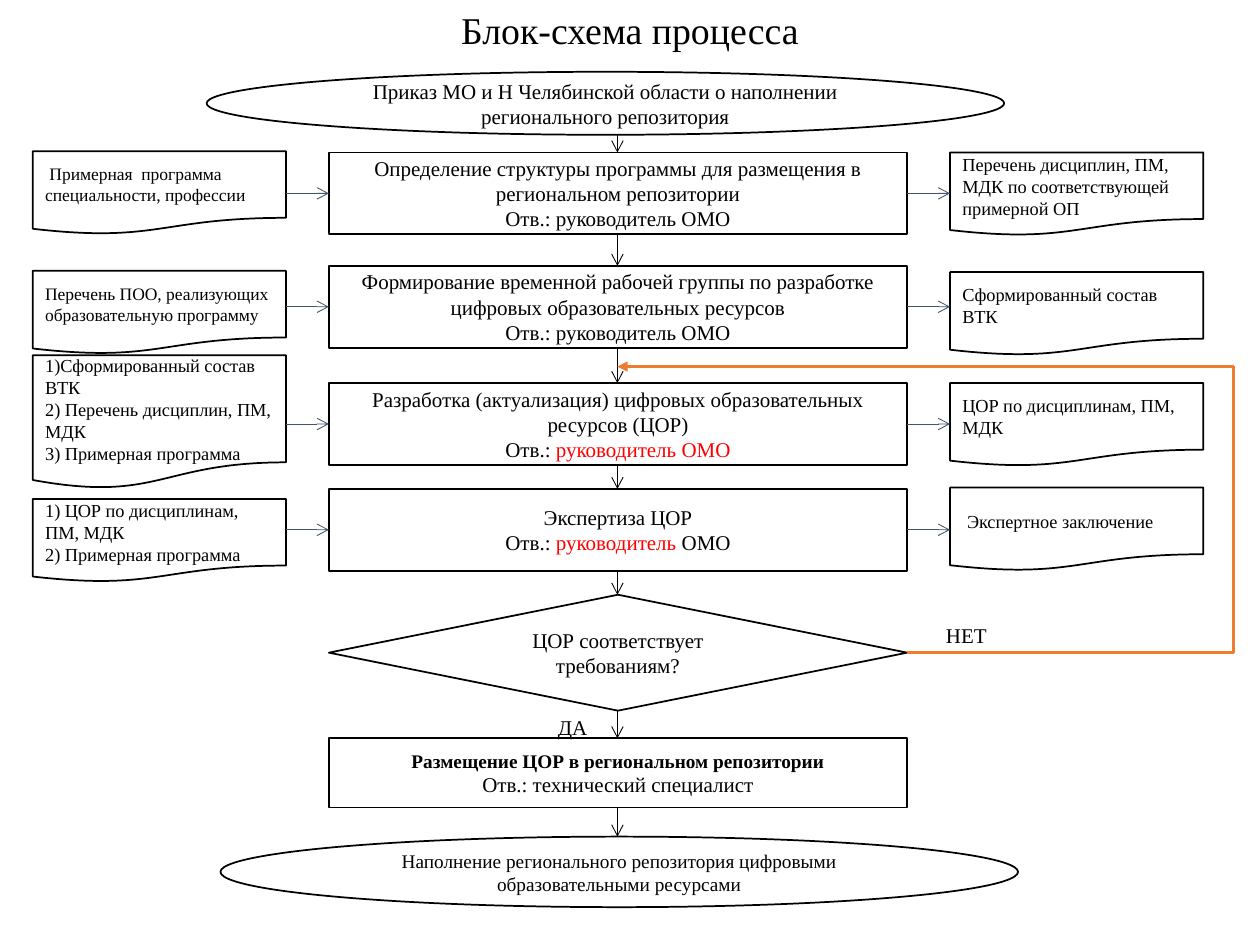
from dataclasses import dataclass
from itertools import pairwise

import lxml.etree
import pptx
import pptx.dml.color
import pptx.enum.shapes
import pptx.enum.text
import pptx.oxml.ns
import pptx.util

KIND = pptx.enum.shapes.MSO_SHAPE
LINK = pptx.enum.shapes.MSO_CONNECTOR
ALIGN = pptx.enum.text.PP_ALIGN
CELL = pptx.util.Inches(0.1)  # the slide is a grid of 100 columns by 75 rows


@dataclass(frozen=True)
class Theme:
    font: str = "Times New Roman"
    ink: str = "000000"
    paper: str = "FFFFFF"
    alert: str = "FF0000"
    flow: str = "44546A"
    loop: str = "ED7D31"
    title: float = 21.6
    body: float = 12
    final: float = 11
    note: float = 10.5
    small: float = 10
    outline: float = 1
    arrow: float = 0.5
    loop_width: float = 1.5


THEME = Theme()


@dataclass(frozen=True)
class Span:
    text: str
    size: float = THEME.body
    color: str = THEME.ink
    bold: bool = False


@dataclass(frozen=True)
class Area:
    left: float
    top: float
    width: float
    height: float

    @property
    def bottom(self) -> float:
        return self.top + self.height

    @property
    def right(self) -> float:
        return self.left + self.width

    @property
    def middle(self) -> float:
        return self.top + self.height / 2

    def lengths(self) -> list[int]:
        return [grid(n) for n in (self.left, self.top, self.width, self.height)]


Lines = list[list[Span]]


@dataclass(frozen=True)
class Note:
    top: float
    lines: Lines
    height: float = 6.6


@dataclass(frozen=True)
class Stage:
    top: float
    lines: Lines
    source: Note
    result: Note


def grid(cells: float) -> int:
    return round(cells * CELL)


def rgb(code: str) -> pptx.dml.color.RGBColor:
    return pptx.dml.color.RGBColor.from_string(code)


def plain(*texts: str, size: float = THEME.body) -> Lines:
    """One single-span paragraph for each text."""
    return [[Span(text, size)] for text in texts]


def write(frame, lines: Lines, align, wrap: bool = True) -> None:
    frame.word_wrap = wrap
    frame.auto_size = pptx.enum.text.MSO_AUTO_SIZE.NONE
    frame.vertical_anchor = pptx.enum.text.MSO_ANCHOR.MIDDLE
    frame.margin_top = frame.margin_bottom = 0
    for index, spans in enumerate(lines):
        para = frame.add_paragraph() if index else frame.paragraphs[0]
        para.alignment = align
        for span in spans:
            run = para.add_run()
            run.text = span.text
            run.font.name = THEME.font
            run.font.size = pptx.util.Pt(span.size)
            run.font.bold = span.bold
            run.font.color.rgb = rgb(span.color)


def draw_box(page, kind, area: Area, lines: Lines, align=ALIGN.CENTER) -> None:
    box = page.shapes.add_shape(kind, *area.lengths())
    box.shadow.inherit = False
    box.fill.solid()
    box.fill.fore_color.rgb = rgb(THEME.paper)
    box.line.color.rgb = rgb(THEME.ink)
    box.line.width = pptx.util.Pt(THEME.outline)
    write(box.text_frame, lines, align)


def draw_label(page, area: Area, text: str) -> None:
    box = page.shapes.add_textbox(*area.lengths())
    write(box.text_frame, plain(text), ALIGN.LEFT, wrap=False)


def draw_arrow(page, start, end, color=THEME.ink, width=THEME.arrow,
               kind=LINK.STRAIGHT, head="arrow"):
    arrow = page.shapes.add_connector(kind, *map(grid, (*start, *end)))
    arrow.line.color.rgb = rgb(color)
    arrow.line.width = pptx.util.Pt(width)
    qn = pptx.oxml.ns.qn
    lxml.etree.SubElement(arrow.line._get_or_add_ln(), qn("a:tailEnd"), type=head)
    lxml.etree.SubElement(arrow._element.spPr, qn("a:effectLst"))
    return arrow


def draw_loop(page, start, end, turn: float) -> None:
    """Elbow arrow whose upright part stands at column `turn`."""
    loop = draw_arrow(page, start, end, THEME.loop, THEME.loop_width, LINK.ELBOW, "triangle")
    share = (turn - start[0]) / (end[0] - start[0])
    qn = pptx.oxml.ns.qn
    guides = loop._element.spPr.find(qn("a:prstGeom")).get_or_add_avLst()
    lxml.etree.SubElement(guides, qn("a:gd"), name="adj1", fmla=f"val {round(share * 100000)}")


LEAD = "Отв.: руководитель ОМО"
SOURCE_LEFT, STAGE_LEFT, RESULT_LEFT = 2.6, 26.1, 75.4
NOTE_WIDTH, STAGE_WIDTH, STAGE_HEIGHT = 20.1, 45.9, 6.5
AXIS = 49

STAGES = [
    Stage(12.1,
          plain("Определение структуры программы для размещения в региональном репозитории", LEAD),
          Note(12, plain(" Примерная  программа специальности, профессии", size=THEME.small)),
          Note(12.1, plain("Перечень дисциплин, ПМ, МДК по соответствующей примерной ОП",
                           size=THEME.note))),
    Stage(21.1,
          plain("Формирование временной рабочей группы по разработке "
                "цифровых образовательных ресурсов", LEAD),
          Note(21.5, plain("Перечень ПОО, реализующих образовательную программу",
                           size=THEME.small)),
          Note(21.6, plain("Сформированный состав ВТК", size=THEME.note))),
    Stage(30.4,
          plain("Разработка (актуализация) цифровых образовательных ресурсов (ЦОР)")
          + [[Span("Отв.: "), Span("руководитель ОМО", color=THEME.alert)]],
          Note(28.2, plain("1)Сформированный состав ВТК", "2) Перечень дисциплин, ПМ, МДК",
                           "3) Примерная программа", size=THEME.note), 10.6),
          Note(30.4, plain("ЦОР по дисциплинам, ПМ, МДК", size=THEME.note))),
    Stage(38.8,
          plain("Экспертиза ЦОР")
          + [[Span("Отв.: "), Span("руководитель ", color=THEME.alert), Span("ОМО")]],
          Note(39.6, plain("1) ЦОР по дисциплинам, ПМ, МДК", "2) Примерная программа",
                           size=THEME.note)),
          Note(38.7, plain(" Экспертное заключение", size=THEME.note))),
]

START = Area(16.4, 5.7, 63.3, 5)
CHECK = Area(STAGE_LEFT, 47.2, STAGE_WIDTH, 9.2)
PUBLISH = Area(STAGE_LEFT, 58.6, STAGE_WIDTH, 5.5)
FINISH = Area(17.5, 66.4, 63.3, 5.6)


def draw_stage(page, stage: Stage, area: Area) -> None:
    draw_box(page, KIND.RECTANGLE, area, stage.lines)
    for left, note in ((SOURCE_LEFT, stage.source), (RESULT_LEFT, stage.result)):
        draw_box(page, KIND.FLOWCHART_DOCUMENT, Area(left, note.top, NOTE_WIDTH, note.height),
                 note.lines, ALIGN.LEFT)
    for begin, end in ((SOURCE_LEFT + NOTE_WIDTH, area.left), (area.right, RESULT_LEFT)):
        draw_arrow(page, (begin, area.middle), (end, area.middle), THEME.flow)


def main() -> None:
    deck = pptx.Presentation()
    deck.slide_width, deck.slide_height = grid(100), grid(75)
    page = deck.slides.add_slide(deck.slide_layouts[5])

    title = page.shapes.title
    title.left, title.top, title.width, title.height = Area(1.2, 0.7, 97.6, 3.3).lengths()
    write(title.text_frame, plain("Блок-схема процесса", size=THEME.title), ALIGN.CENTER)

    areas = [Area(STAGE_LEFT, stage.top, STAGE_WIDTH, STAGE_HEIGHT) for stage in STAGES]
    for upper, lower in pairwise([START, *areas, CHECK, PUBLISH, FINISH]):
        draw_arrow(page, (AXIS, upper.bottom), (AXIS, lower.top))

    draw_box(page, KIND.OVAL, START,
             plain("Приказ МО и Н Челябинской области о наполнении регионального репозитория"))
    for stage, area in zip(STAGES, areas):
        draw_stage(page, stage, area)
    draw_box(page, KIND.DIAMOND, CHECK, plain("ЦОР соответствует требованиям?"))
    draw_box(page, KIND.RECTANGLE, PUBLISH,
             [[Span("Размещение ЦОР в региональном репозитории", THEME.final, bold=True)],
              [Span("Отв.: технический специалист")]])
    draw_box(page, KIND.OVAL, FINISH,
             plain("Наполнение регионального репозитория цифровыми образовательными ресурсами",
                   size=THEME.final))

    draw_label(page, Area(43.3, 56.2, 4.8, 3), "ДА")
    draw_label(page, Area(74.1, 48.9, 5.6, 3), "НЕТ")
    draw_loop(page, (CHECK.right, CHECK.middle), (AXIS, 29.1), turn=97.9)
    deck.save("out.pptx")


if __name__ == "__main__":
    main()
